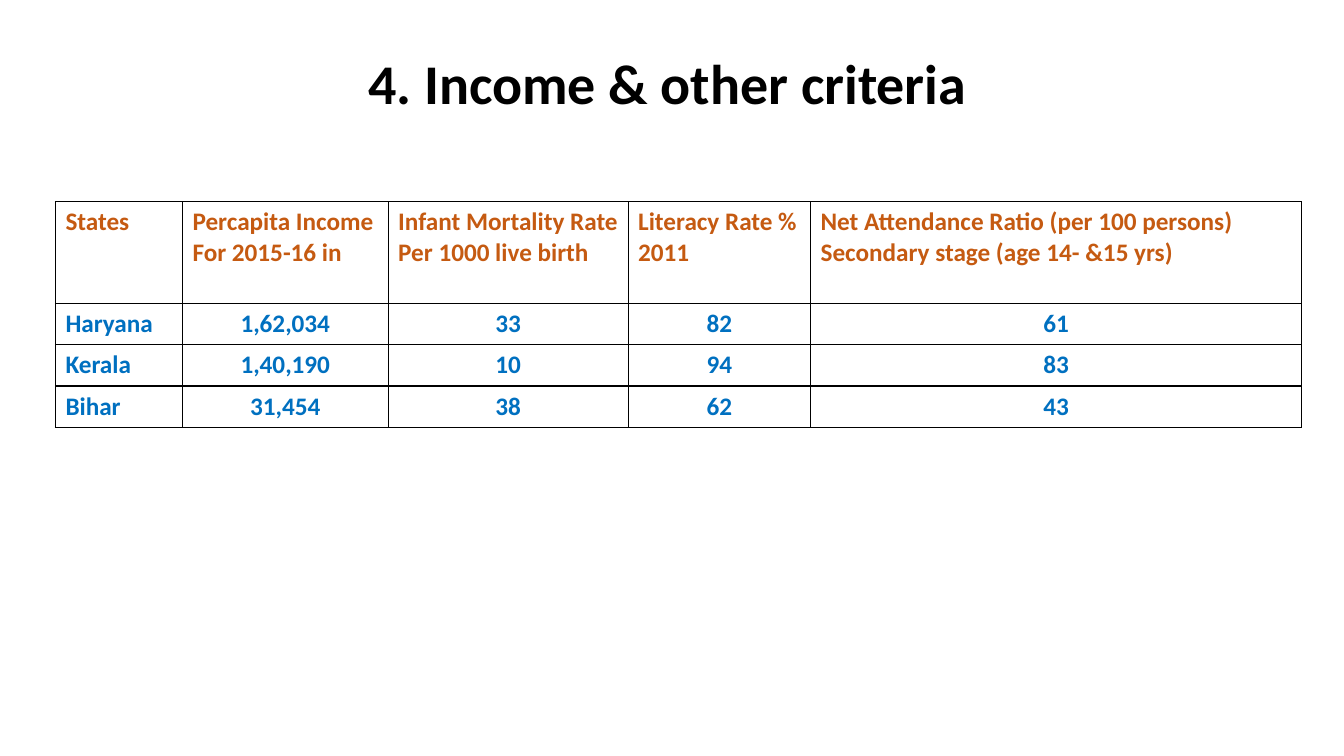
from lxml.etree import SubElement
from pptx import Presentation
from pptx.dml.color import RGBColor
from pptx.enum.text import MSO_ANCHOR, PP_ALIGN
from pptx.oxml.ns import qn
from pptx.util import Inches, Pt

BLACK = RGBColor(0x00, 0x00, 0x00)
ORANGE = RGBColor(0xC5, 0x5A, 0x11)
BLUE = RGBColor(0x00, 0x70, 0xC0)

COLUMN_WIDTHS = [1.26, 2.04, 2.38, 1.81, 4.87]
HEADER_HEIGHT, ROW_HEIGHT = 1.01, 0.41
ROWS = [
    ["States", "Percapita Income\nFor 2015-16 in",
     "Infant Mortality Rate\nPer 1000 live birth", "Literacy Rate %\n2011",
     "Net Attendance Ratio (per 100 persons)\nSecondary stage (age 14- &15 yrs)"],
    ["Haryana", "1,62,034", "33", "82", "61"],
    ["Kerala", "1,40,190", "10", "94", "83"],
    ["Bihar", "31,454", "38", "62", "43"],
]


def format_paragraph(para, align, size, color):
    para.alignment = align
    for span in para.runs:
        values = {"name": "Calibri", "size": Pt(size), "bold": True}
        for name, value in values.items():
            setattr(span.font, name, value)
        span.font.color.rgb = color


def add_borders(cell):
    properties = cell._tc.get_or_add_tcPr()
    for side in ("a:lnL", "a:lnR", "a:lnT", "a:lnB"):
        line = SubElement(properties, qn(side), w=str(Pt(1)))
        fill = SubElement(line, qn("a:solidFill"))
        SubElement(fill, qn("a:srgbClr"), val=str(BLACK))


deck = Presentation()
deck.slide_width, deck.slide_height = Inches(13.33), Inches(7.5)
page = deck.slides.add_slide(deck.slide_layouts[5])

title = page.shapes.title
title.left, title.top = Inches(0.87), Inches(0.41)
title.width, title.height = Inches(11.5), Inches(0.9)
title.text_frame.text = "4. Income & other criteria"
title.text_frame.vertical_anchor = MSO_ANCHOR.MIDDLE
heading = title.text_frame.paragraphs[0]
heading.line_spacing = 0.9
format_paragraph(heading, PP_ALIGN.CENTER, 40, BLACK)

table_height = HEADER_HEIGHT + ROW_HEIGHT * (len(ROWS) - 1)
table = page.shapes.add_table(
    len(ROWS), len(COLUMN_WIDTHS), Inches(0.55), Inches(2),
    Inches(sum(COLUMN_WIDTHS)), Inches(table_height)).table
table.first_row = table.horz_banding = False
for column, width in zip(table.columns, COLUMN_WIDTHS):
    column.width = Inches(width)

for row_index, texts in enumerate(ROWS):
    is_header = row_index == 0
    table.rows[row_index].height = Inches(HEADER_HEIGHT if is_header else ROW_HEIGHT)
    for column_index, text in enumerate(texts):
        cell = table.cell(row_index, column_index)
        cell.text = text
        add_borders(cell)
        cell.fill.background()
        is_label = is_header or column_index == 0
        for para in cell.text_frame.paragraphs:
            format_paragraph(para, PP_ALIGN.LEFT if is_label else PP_ALIGN.CENTER,
                             18, ORANGE if is_header else BLUE)

deck.save("out.pptx")
